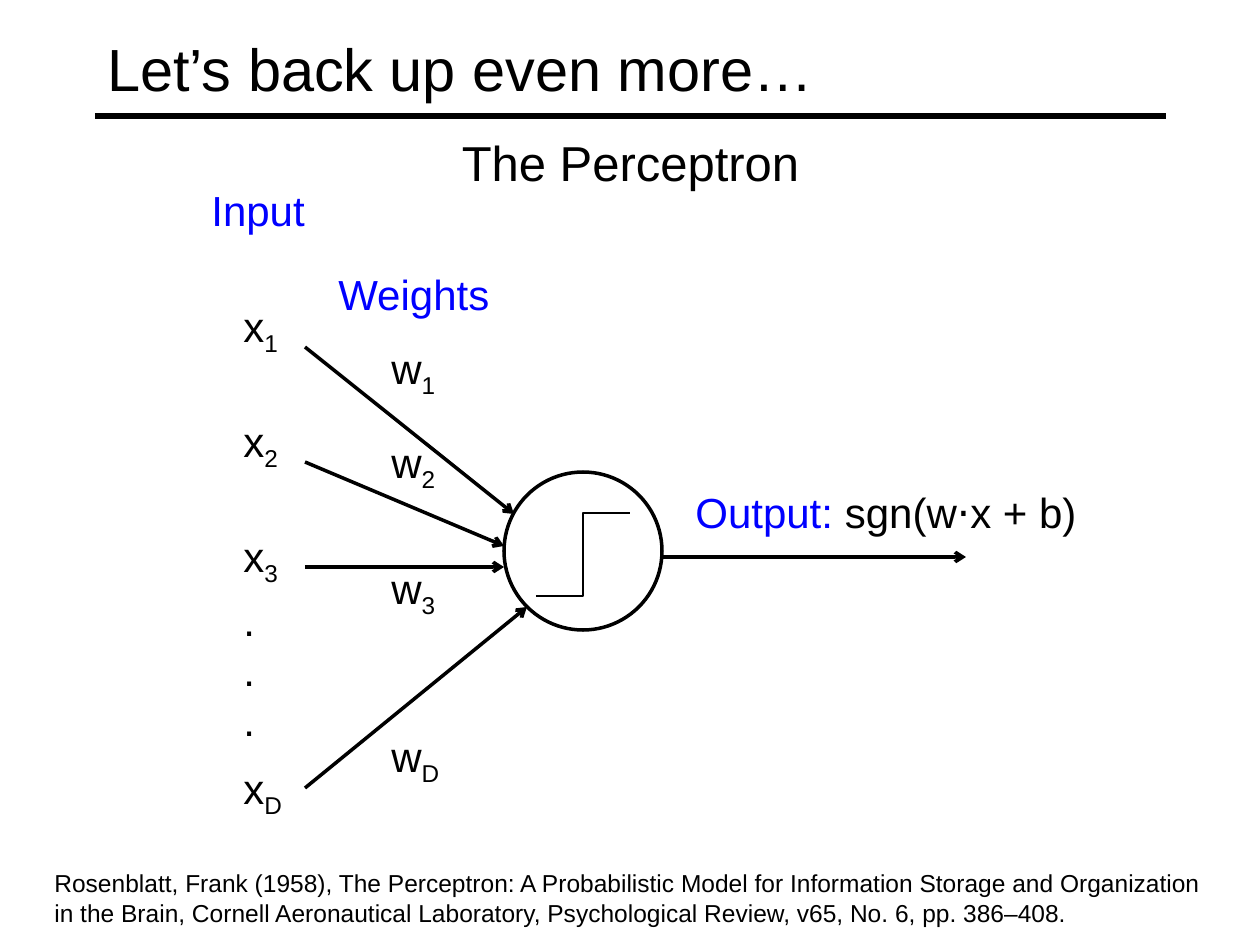
from lxml.etree import SubElement
from pptx import Presentation
from pptx.dml.color import RGBColor
from pptx.enum.shapes import MSO_CONNECTOR as LINK, MSO_SHAPE as SHAPE
from pptx.enum.text import MSO_ANCHOR as ANCHOR, MSO_AUTO_SIZE as FIT, PP_ALIGN as ALIGN
from pptx.oxml.ns import qn
from pptx.util import Pt

PX = 914400 / 126
BLACK, BLUE = "000000", "0000FF"
rgb = RGBColor.from_string

deck = Presentation()
deck.slide_width, deck.slide_height = int(1260 * PX), int(945 * PX)
slide = deck.slides.add_slide(deck.slide_layouts[6])


def add_text(box, lines, size=24, color=BLACK, wrap=False, fit=FIT.SHAPE_TO_FIT_TEXT):
    """Add a text box at (left, top, width, height) px, one paragraph per line."""
    frame = slide.shapes.add_textbox(*(int(v * PX) for v in box)).text_frame
    frame.word_wrap = wrap
    frame.auto_size = fit
    frame.text = "\n".join(lines)
    for paragraph in frame.paragraphs:
        paragraph.font.name = "Arial"
        paragraph.font.size = Pt(size)
        paragraph.font.color.rgb = rgb(color)
    return frame


def add_line(start, end, width=2, kind=LINK.STRAIGHT, arrow=False):
    line = slide.shapes.add_connector(kind, *(int(v * PX) for v in (*start, *end)))
    line.line.color.rgb = rgb(BLACK)
    line.line.width = Pt(width)
    if arrow:
        SubElement(line.line._get_or_add_ln(), qn("a:tailEnd"), type="arrow")
    SubElement(line._element.spPr, qn("a:effectLst"))


# Heading
add_line((95, 116), (1166, 116), width=3)
title = add_text((95, 10, 1071, 116), ["Let’s back up even more…"], 34, wrap=True, fit=FIT.NONE)
title.vertical_anchor = ANCHOR.MIDDLE
topic = add_text((95, 126, 1071, 724), ["The Perceptron"], 28, wrap=True, fit=FIT.NONE)
topic.paragraphs[0].alignment = ALIGN.CENTER

# Neuron with its step function
neuron = slide.shapes.add_shape(SHAPE.OVAL, *(int(v * PX) for v in (504, 472, 158, 158)))
neuron.shadow.inherit = False
neuron.fill.background()
neuron.line.color.rgb = rgb(BLACK)
neuron.line.width = Pt(2)
add_line((536, 596), (630, 513), width=0.75, kind=LINK.ELBOW)

# Input arrows and output arrow
for start, end in [
    ((305, 347), (514, 514)),
    ((305, 462), (504, 546)),
    ((305, 567), (504, 567)),
    ((305, 788), (527, 607)),
    ((662, 557), (966, 557)),
]:
    add_line(start, end, arrow=True)

# Inputs and weights; the capital subscript needs a wider box
for index, input_top, weight_top, subscript_width in [
    ("1", 294, 336, 21), ("2", 409, 430, 21), ("3", 524, 556, 21), ("D", 756, 724, 26),
]:
    for symbol, left, top, symbol_width in [("x", 231, input_top, 41), ("w", 379, weight_top, 52)]:
        box = (left, top, symbol_width + subscript_width, 63)
        label = add_text(box, [symbol]).paragraphs[0]
        subscript = label.add_run()
        subscript.text = index
        subscript._r.get_or_add_rPr().set("baseline", "-25000")
add_text((231, 588, 37, 165), [".", ".", "."])

# Captions
add_text((199, 178, 121, 63), ["Input"], color=BLUE)
add_text((326, 262, 178, 63), ["Weights"], color=BLUE)
output = add_text((683, 480, 407, 63), ["Output: "], color=BLUE).paragraphs[0]
formula = output.add_run()
formula.text = "sgn(w⋅x + b)"
formula.font.color.rgb = rgb(BLACK)

add_text(
    (42, 862, 1187, 72),
    ["Rosenblatt, Frank (1958), The Perceptron: A Probabilistic Model for Information "
     "Storage and Organization in the Brain, Cornell Aeronautical Laboratory, "
     "Psychological Review, v65, No. 6, pp. 386–408."],
    14, wrap=True,
)

deck.save("out.pptx")
